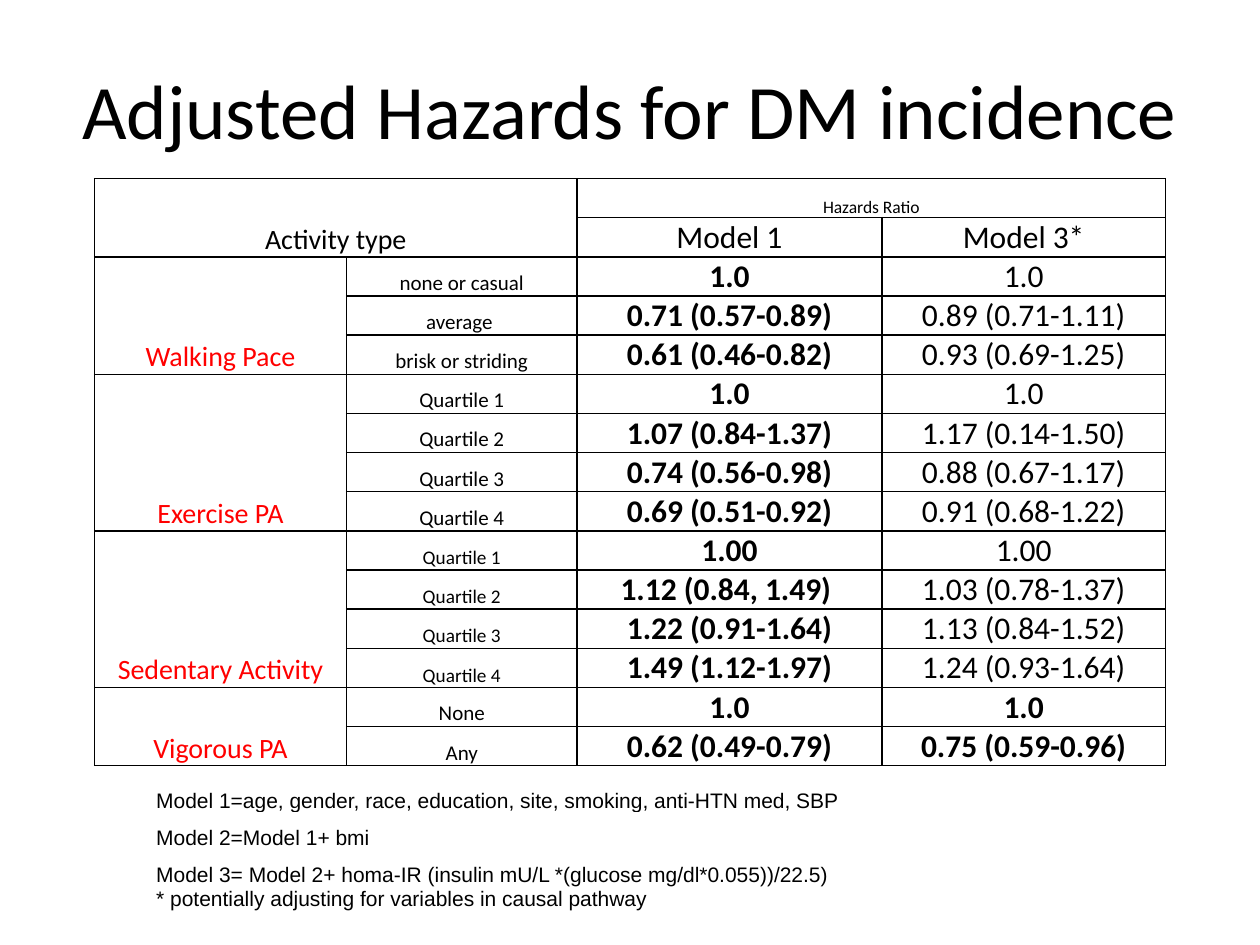
from dataclasses import dataclass

from lxml import etree
from pptx import Presentation
from pptx import util as u
from pptx.dml.color import RGBColor
from pptx.enum import text
from pptx.oxml import ns


@dataclass(frozen=True)
class Theme:
    ink: str = "000000"
    accent: str = "FF0000"
    body_font: str = "Calibri"
    note_font: str = "Arial"
    title: int = 44
    value: int = 18
    group: int = 16
    level: int = 12
    small_level: int = 11
    caption: int = 10
    border: int = 1


THEME = Theme()
WIDTH, HEIGHT = 10, 7.5
COLUMNS = (2, 1.83, 2.42, 2.25)
NOTE_ROWS = (0.19, 0.3, 0.67)
NOTE_BOTTOM = 0.19

GROUPS = (
    ("Walking Pace", THEME.level, False, (
        ("none or casual", "1.0", "1.0"),
        ("average ", "0.71 (0.57-0.89)", "0.89 (0.71-1.11)"),
        ("brisk or striding", "0.61 (0.46-0.82)", "0.93 (0.69-1.25)"),
    )),
    ("Exercise PA", THEME.level, False, (
        ("Quartile 1", "1.0", "1.0"),
        ("Quartile 2", "1.07 (0.84-1.37)", "1.17 (0.14-1.50)"),
        ("Quartile 3", "0.74 (0.56-0.98)", "0.88 (0.67-1.17)"),
        ("Quartile 4", "0.69 (0.51-0.92)", "0.91 (0.68-1.22)"),
    )),
    ("Sedentary Activity", THEME.small_level, False, (
        ("Quartile 1", "1.00", "1.00"),
        ("Quartile 2", "1.12 (0.84, 1.49) ", "1.03 (0.78-1.37)"),
        ("Quartile 3", "1.22 (0.91-1.64)", "1.13 (0.84-1.52)"),
        ("Quartile 4", "1.49 (1.12-1.97)", "1.24 (0.93-1.64)"),
    )),
    ("Vigorous PA", THEME.level, True, (
        ("None", "1.0", "1.0"),
        ("Any", "0.62 (0.49-0.79)", "0.75 (0.59-0.96)"),
    )),
)
NOTES = (
    "Model 1=age, gender, race, education, site, smoking, anti-HTN med, SBP",
    "Model 2=Model 1+ bmi",
    "Model 3= Model 2+ homa-IR (insulin mU/L *(glucose mg/dl*0.055))/22.5)\n"
    "* potentially adjusting for variables in causal pathway",
)


def write(frame, words, size, color=THEME.ink, bold=False,
          font=THEME.body_font, align=text.PP_ALIGN.CENTER):
    frame.text = words
    for para in frame.paragraphs:
        para.alignment = align
        for span in para.runs:
            span.font.name = font
            span.font.size = u.Pt(size)
            span.font.bold = bold
            span.font.color.rgb = RGBColor.from_string(color)


def add_title(page, words):
    box = page.shapes.add_textbox(
        u.Inches(WIDTH * 0.05), u.Inches(HEIGHT * 0.04),
        u.Inches(WIDTH * 0.9), u.Inches(HEIGHT * 0.15))
    box.text_frame.word_wrap = True
    box.text_frame.vertical_anchor = text.MSO_ANCHOR.MIDDLE
    write(box.text_frame, words, THEME.title)


def add_grid(page, left, top, columns, rows):
    frame = page.shapes.add_table(
        len(rows), len(columns), u.Inches(left), u.Inches(top),
        u.Inches(sum(columns)), u.Inches(sum(rows)))
    table = frame.table
    table.first_row = table.horz_banding = False
    for column, width in zip(table.columns, columns):
        column.width = u.Inches(width)
    for row, height in zip(table.rows, rows):
        row.height = u.Inches(height)
    for cell in table.iter_cells():
        cell.fill.background()
        cell.vertical_anchor = text.MSO_ANCHOR.BOTTOM
        cell.margin_left = cell.margin_right = u.Inches(0.07)
        cell.margin_top = cell.margin_bottom = 0
    return table


def draw_borders(cell):
    properties = cell._tc.get_or_add_tcPr()
    for place, side in enumerate(("a:lnL", "a:lnR", "a:lnT", "a:lnB")):
        line = etree.Element(ns.qn(side), w=str(u.Pt(THEME.border)))
        fill = etree.SubElement(line, ns.qn("a:solidFill"))
        etree.SubElement(fill, ns.qn("a:srgbClr"), val=THEME.ink)
        properties.insert(place, line)


def add_hazards(page):
    row_count = 2 + sum(len(levels) for _, _, _, levels in GROUPS)
    rows = [HEIGHT * 0.622 / row_count] * row_count
    table = add_grid(page, WIDTH * 0.075, HEIGHT * 0.189, COLUMNS, rows)
    for cell in table.iter_cells():
        draw_borders(cell)

    table.cell(0, 0).merge(table.cell(1, 1))
    table.cell(0, 2).merge(table.cell(0, 3))
    write(table.cell(0, 0).text_frame, "Activity type", THEME.group)
    write(table.cell(0, 2).text_frame, "Hazards Ratio", THEME.caption)
    write(table.cell(1, 2).text_frame, "Model 1", THEME.value)
    write(table.cell(1, 3).text_frame, "Model 3*", THEME.value)

    start = 2
    for name, level_size, adjusted_bold, levels in GROUPS:
        end = start + len(levels)
        table.cell(start, 0).merge(table.cell(end - 1, 0))
        write(table.cell(start, 0).text_frame, name, THEME.group, THEME.accent)
        for row, (level, crude, adjusted) in enumerate(levels, start):
            write(table.cell(row, 1).text_frame, level, level_size)
            write(table.cell(row, 2).text_frame, crude, THEME.value, bold=True)
            write(table.cell(row, 3).text_frame, adjusted, THEME.value,
                  bold=adjusted_bold)
        start = end


def add_notes(page):
    table = add_grid(page, WIDTH * 0.117, HEIGHT * 0.833,
                     (WIDTH * 0.758,), NOTE_ROWS)
    for row, note in enumerate(NOTES):
        write(table.cell(row, 0).text_frame, note, THEME.level,
              font=THEME.note_font, align=text.PP_ALIGN.LEFT)
    table.cell(len(NOTES) - 1, 0).margin_bottom = u.Inches(NOTE_BOTTOM)


def main():
    deck = Presentation()
    deck.slide_width, deck.slide_height = u.Inches(WIDTH), u.Inches(HEIGHT)
    page = deck.slides.add_slide(deck.slide_layouts[6])
    add_title(page, "Adjusted Hazards for DM incidence")
    add_hazards(page)
    add_notes(page)
    deck.save("out.pptx")


if __name__ == "__main__":
    main()
